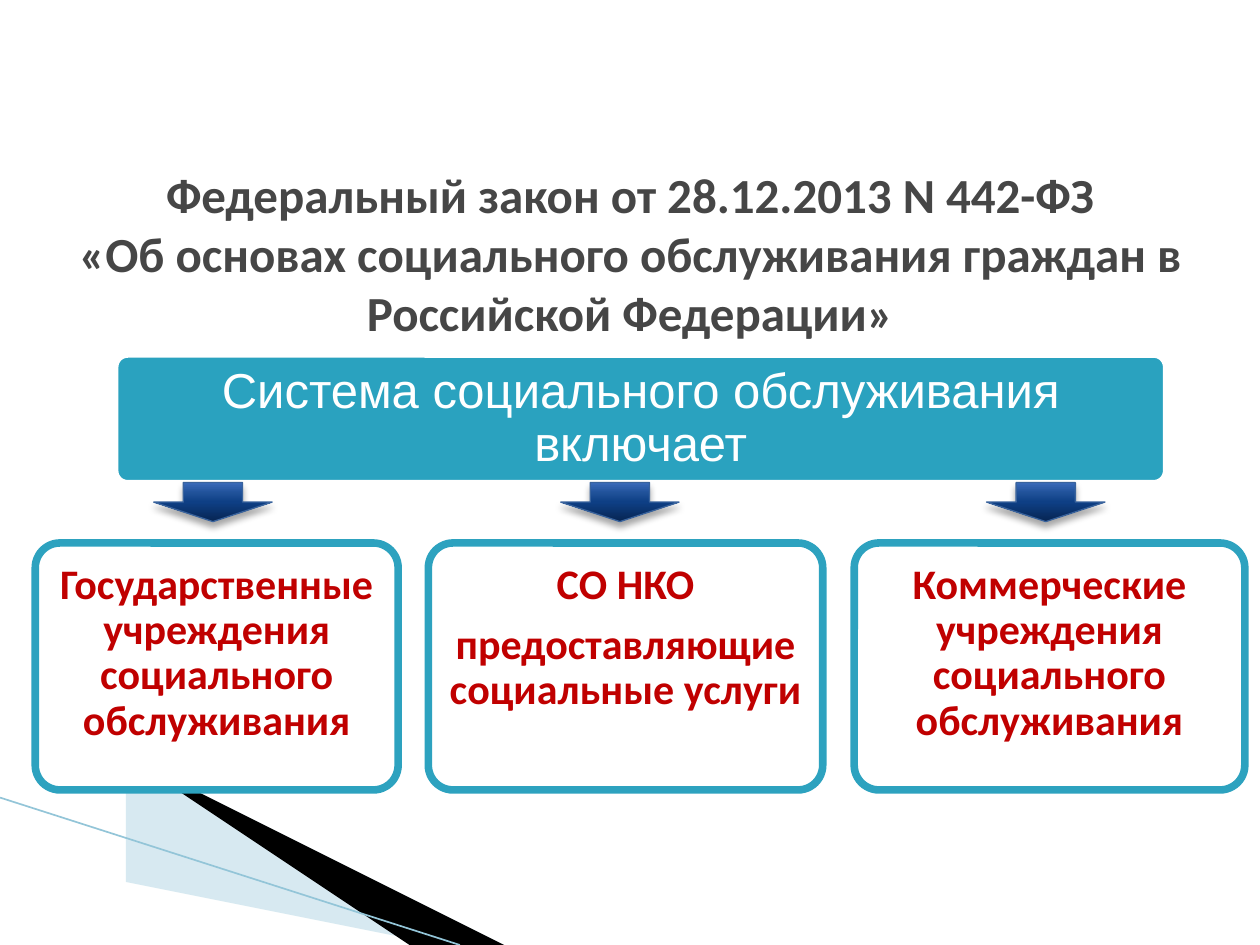
from dataclasses import dataclass

from lxml import etree
from pptx import Presentation
from pptx.dml.color import RGBColor
from pptx.enum.shapes import MSO_CONNECTOR, MSO_SHAPE
from pptx.enum.text import MSO_ANCHOR, PP_ALIGN
from pptx.oxml import parse_xml
from pptx.oxml.ns import nsdecls, qn
from pptx.util import Inches, Pt

ROUNDED, DOWN_ARROW = MSO_SHAPE.ROUNDED_RECTANGLE, MSO_SHAPE.DOWN_ARROW
STRAIGHT = MSO_CONNECTOR.STRAIGHT
CENTER = PP_ALIGN.CENTER
TOP, MIDDLE = MSO_ANCHOR.TOP, MSO_ANCHOR.MIDDLE


@dataclass(frozen=True)
class Theme:
    white: str = "FFFFFF"
    title: str = "464646"
    banner: str = "2AA2BF"
    card_border: str = "2DA2BF"
    card_text: str = "C00000"
    arrow_border: str = "39639D"
    arrow_stops: tuple = ((0, "072552"), (50, "0E3F85"), (70, "1D4F96"), (100, "3A6AB9"))
    pale_wedge: str = "9CCADC"
    dark_wedge: str = "000000"
    wedge_edge: str = "93C5D8"
    heading_size: float = 28
    card_size: float = 24
    border_width: float = 4.33
    heading_font: str = "Calibri"
    banner_font: str = "Arial"


@dataclass(frozen=True)
class Card:
    left: float
    width: float
    arrow_left: float
    paragraphs: tuple


@dataclass(frozen=True)
class Wedge:
    points: tuple
    color: str
    opacity: int = 100


THEME = Theme()
CARD_TOP, CARD_HEIGHT = 4.31, 1.96
ARROW_TOP, ARROW_WIDTH, ARROW_HEIGHT = 3.83, 0.94, 0.31

TITLE = ("Федеральный закон от 28.12.2013 N 442-ФЗ\v"
         "«Об основах социального обслуживания граждан в Российской Федерации»")
BANNER = "Система социального обслуживания включает"
CARDS = (
    Card(0.28, 2.88, 1.22, ("Государственные учреждения социального обслуживания",)),
    Card(3.4, 3.13, 4.45, ("СО НКО", "предоставляющие социальные услуги")),
    Card(6.78, 3.1, 7.83, ("Коммерческие учреждения социального обслуживания",)),
)
WEDGES = (
    Wedge(((0.55, 6.51), (5.95, 7.5), (4.56, 7.5), (0.55, 6.5)), THEME.pale_wedge, 40),
    Wedge(((0.53, 6.49), (4.57, 7.5), (3.72, 7.5), (0.54, 6.5)), THEME.dark_wedge),
)
TITLE_FORMAT = {"name": THEME.heading_font, "size": Pt(THEME.heading_size), "bold": True}
BANNER_FORMAT = {"name": THEME.banner_font, "size": Pt(THEME.heading_size), "bold": False}
CARD_FORMAT = {"name": THEME.heading_font, "size": Pt(THEME.card_size), "bold": True}


def rgb(color: str) -> RGBColor:
    return RGBColor.from_string(color)


def write_text(shape, paragraphs: tuple, font_format: dict, color: str,
               inset: tuple, anchor, line_spacing: float = 1.0) -> None:
    """Fill a shape with centred paragraphs; inset is (horizontal, vertical)."""
    frame = shape.text_frame
    horizontal, vertical = (Inches(side) for side in inset)
    frame_format = {"word_wrap": True, "vertical_anchor": anchor,
                    "margin_left": horizontal, "margin_right": horizontal,
                    "margin_top": vertical, "margin_bottom": vertical}
    for attribute, value in frame_format.items():
        setattr(frame, attribute, value)
    for index, wording in enumerate(paragraphs):
        paragraph = frame.add_paragraph() if index else frame.paragraphs[0]
        paragraph.text = wording
        paragraph.alignment = CENTER
        paragraph.line_spacing = line_spacing
        if index:
            paragraph.space_before = Pt(8.4)
        for run in paragraph.runs:
            for attribute, value in font_format.items():
                setattr(run.font, attribute, value)
            run.font.color.rgb = rgb(color)


def add_panel(slide, box: tuple, fill: str, border: str):
    panel = slide.shapes.add_shape(ROUNDED, *(Inches(value) for value in box))
    panel.adjustments[0] = 0.1
    panel.shadow.inherit = False
    panel.fill.solid()
    panel.fill.fore_color.rgb = rgb(fill)
    panel.line.color.rgb = rgb(border)
    panel.line.width = Pt(THEME.border_width)
    return panel


def add_arrow(slide, left: float) -> None:
    """Draw a down arrow with a vertical gradient and a soft shadow below."""
    arrow = slide.shapes.add_shape(DOWN_ARROW, Inches(left), Inches(ARROW_TOP),
                                   Inches(ARROW_WIDTH), Inches(ARROW_HEIGHT))
    stops = "".join(f'<a:gs pos="{position * 1000}"><a:srgbClr val="{color}"/></a:gs>'
                    for position, color in THEME.arrow_stops)
    properties = arrow.element.spPr
    properties.find(qn("a:prstGeom")).addnext(parse_xml(
        f'<a:gradFill {nsdecls("a")} rotWithShape="1"><a:gsLst>{stops}</a:gsLst>'
        '<a:lin ang="16200000" scaled="0"/></a:gradFill>'))
    arrow.line.color.rgb = rgb(THEME.arrow_border)
    arrow.line.width = Pt(0.75)
    arrow.shadow.inherit = False
    properties.find(qn("a:effectLst")).append(parse_xml(
        f'<a:outerShdw {nsdecls("a")} blurRad="{Pt(4)}" dist="{Pt(3)}" dir="5400000" '
        'rotWithShape="0"><a:srgbClr val="000000"><a:alpha val="35000"/></a:srgbClr>'
        '</a:outerShdw>'))


def add_wedge(slide, wedge: Wedge) -> None:
    start, *others = wedge.points
    builder = slide.shapes.build_freeform(*start, scale=Inches(1))
    builder.add_line_segments(others, close=True)
    shape = builder.convert_to_shape()
    shape.shadow.inherit = False
    shape.fill.solid()
    shape.fill.fore_color.rgb = rgb(wedge.color)
    shape.line.fill.background()
    if wedge.opacity < 100:
        color = shape.element.spPr.find(qn("a:solidFill")).find(qn("a:srgbClr"))
        etree.SubElement(color, qn("a:alpha"), val=str(wedge.opacity * 1000))


def add_wedge_edge(slide) -> None:
    edge = slide.shapes.add_connector(STRAIGHT, Inches(0), Inches(6.33),
                                      Inches(3.65), Inches(7.5))
    edge.line.color.rgb = rgb(THEME.wedge_edge)
    edge.line.width = Pt(0.95)
    etree.SubElement(edge.element.spPr, qn("a:effectLst"))


def main() -> None:
    deck = Presentation()
    deck.slide_width, deck.slide_height = Inches(10), Inches(7.5)
    slide = deck.slides.add_slide(deck.slide_layouts[6])

    for wedge in WEDGES:
        add_wedge(slide, wedge)
    add_wedge_edge(slide)

    title = slide.shapes.add_textbox(Inches(0.5), Inches(1.23), Inches(9), Inches(1.56))
    write_text(title, (TITLE,), TITLE_FORMAT, THEME.title, (0.1, 0.05), MIDDLE)

    banner = add_panel(slide, (0.91, 2.81, 8.35, 1.03), THEME.banner, THEME.white)
    write_text(banner, (BANNER,), BANNER_FORMAT, THEME.white, (0.12, 0.12), MIDDLE, 0.9)

    for card in CARDS:
        panel = add_panel(slide, (card.left, CARD_TOP, card.width, CARD_HEIGHT),
                          THEME.white, THEME.card_border)
        write_text(panel, card.paragraphs, CARD_FORMAT, THEME.card_text,
                   (0.1, 0.1), TOP, 0.9)
        add_arrow(slide, card.arrow_left)

    deck.save("out.pptx")


if __name__ == "__main__":
    main()
